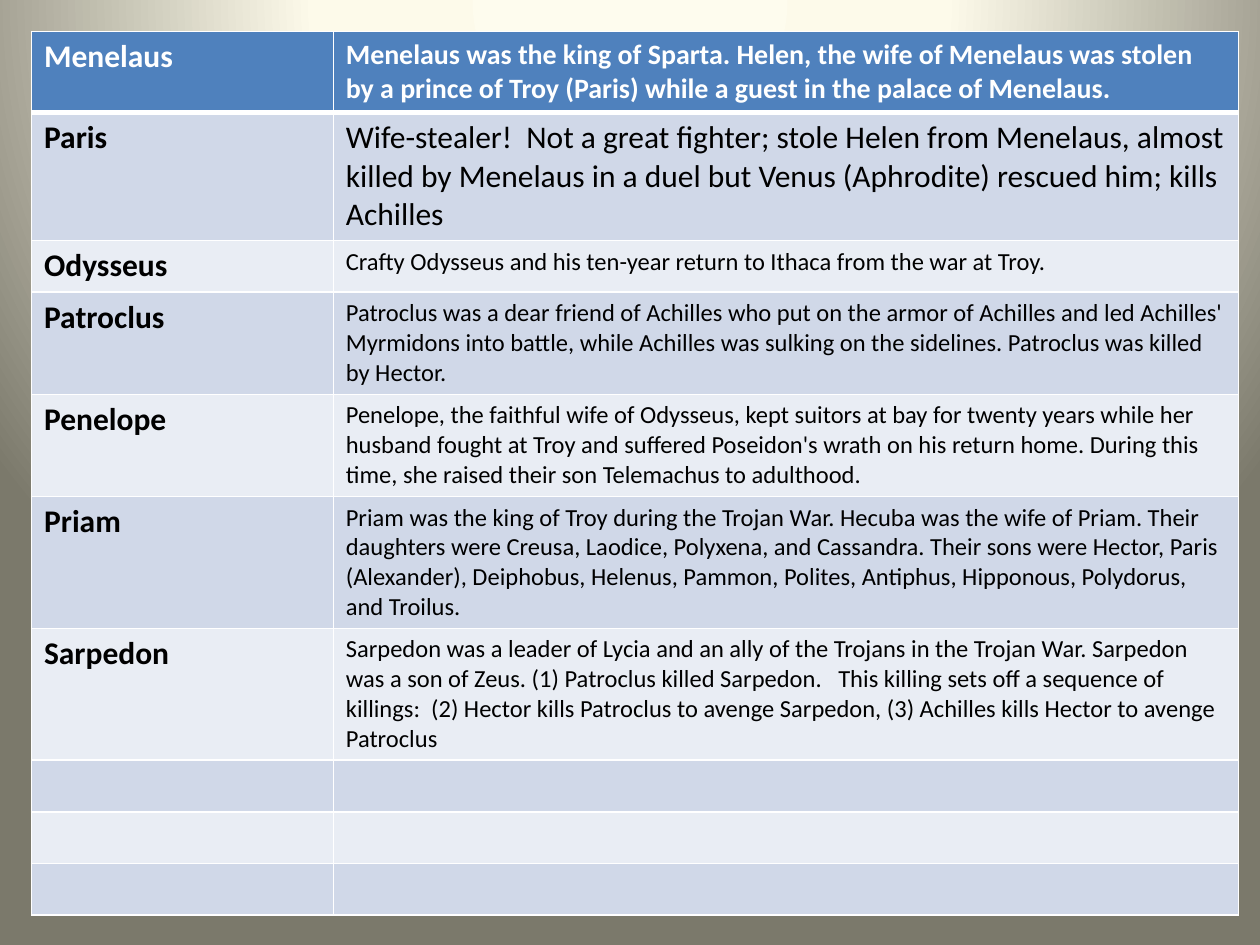
from dataclasses import dataclass

from lxml import etree
from pptx import Presentation
from pptx.dml.color import RGBColor
from pptx.oxml import ns
from pptx.util import Inches, Pt


@dataclass(frozen=True)
class Theme:
    font: str = "Calibri"
    header_fill: str = "4F81BD"
    bands: tuple = ("D0D8E8", "E9EDF4")
    header_text: str = "FFFFFF"
    body_text: str = "000000"
    border: str = "FFFFFF"
    backdrop: tuple = ((0, "FEFCEE"), (40, "FDFAEA"), (100, "7B796B"))
    name_size: int = 18
    header_size: int = 16
    body_size: int = 14
    rule: int = 1
    header_rule: int = 3


THEME = Theme()
BLANK_ROWS = 3

# Name, description, description size
CHARACTERS = [
    ("Menelaus",
     "Menelaus was the king of Sparta. Helen, the wife of Menelaus was stolen "
     "by a prince of Troy (Paris) while a guest in the palace of Menelaus.",
     THEME.header_size),
    ("Paris",
     "Wife-stealer!  Not a great fighter; stole Helen from Menelaus, almost "
     "killed by Menelaus in a duel but Venus (Aphrodite) rescued him; kills "
     "Achilles",
     THEME.name_size),
    ("Odysseus",
     "Crafty Odysseus and his ten-year return to Ithaca from the war at Troy.",
     THEME.body_size),
    ("Patroclus",
     "Patroclus was a dear friend of Achilles who put on the armor of Achilles "
     "and led Achilles' Myrmidons into battle, while Achilles was sulking on "
     "the sidelines. Patroclus was killed by Hector.",
     THEME.body_size),
    ("Penelope",
     "Penelope, the faithful wife of Odysseus, kept suitors at bay for twenty "
     "years while her husband fought at Troy and suffered Poseidon's wrath on "
     "his return home. During this time, she raised their son Telemachus to "
     "adulthood.",
     THEME.body_size),
    ("Priam",
     "Priam was the king of Troy during the Trojan War. Hecuba was the wife of "
     "Priam. Their daughters were Creusa, Laodice, Polyxena, and Cassandra. "
     "Their sons were Hector, Paris (Alexander), Deiphobus, Helenus, Pammon, "
     "Polites, Antiphus, Hipponous, Polydorus, and Troilus.",
     THEME.body_size),
    ("Sarpedon",
     "Sarpedon was a leader of Lycia and an ally of the Trojans in the Trojan "
     "War. Sarpedon was a son of Zeus. (1) Patroclus killed Sarpedon.   This "
     "killing sets off a sequence of killings:  (2) Hector kills Patroclus to "
     "avenge Sarpedon, (3) Achilles kills Hector to avenge Patroclus",
     THEME.body_size),
]


def add_xml(parent, tag, **attributes):
    values = {key: str(value) for key, value in attributes.items()}
    return etree.SubElement(parent, ns.qn(tag), values)


def write_text(frame, wording, *, size, color, bold=False):
    run = frame.paragraphs[0].add_run()
    run.text = wording
    run.font.name = THEME.font
    run.font.size = Pt(size)
    run.font.bold = bold
    run.font.color.rgb = RGBColor.from_string(color)


def paint_backdrop(slide):
    """Fill the slide with a circular gradient centred above its top edge."""
    slide.background.fill.gradient()
    gradient = slide.element.find(".//" + ns.qn("a:gradFill"))
    for child in list(gradient):
        gradient.remove(child)
    stops = add_xml(gradient, "a:gsLst")
    for position, color in THEME.backdrop:
        stop = add_xml(stops, "a:gs", pos=position * 1000)
        add_xml(stop, "a:srgbClr", val=color)
    circle = add_xml(gradient, "a:path", path="circle")
    add_xml(circle, "a:fillToRect", l=50000, t=-80000, r=50000, b=180000)


def style_cell(cell, fill, top, bottom):
    """Draw the four borders, then the fill, in schema order."""
    properties = cell._tc.get_or_add_tcPr()
    widths = {"L": THEME.rule, "R": THEME.rule, "T": top, "B": bottom}
    for side, width in widths.items():
        line = add_xml(properties, "a:ln" + side, w=Pt(width))
        add_xml(add_xml(line, "a:solidFill"), "a:srgbClr", val=THEME.border)
    cell.fill.solid()
    cell.fill.fore_color.rgb = RGBColor.from_string(fill)


def add_character_table(slide, left, top, width, row_height):
    row_count = len(CHARACTERS) + BLANK_ROWS
    table = slide.shapes.add_table(
        row_count, 2, left, top, width, row_height * row_count).table
    table.columns[0].width = width // 4
    table.columns[1].width = width - width // 4

    # Header and banded rows
    for index, row in enumerate(table.rows):
        row.height = row_height
        header = index == 0
        fill = THEME.header_fill if header else THEME.bands[(index - 1) % 2]
        above = THEME.header_rule if index == 1 else THEME.rule
        below = THEME.header_rule if header else THEME.rule
        for cell in row.cells:
            style_cell(cell, fill, above, below)

    # Names and descriptions
    for index, (name, description, size) in enumerate(CHARACTERS):
        header = index == 0
        color = THEME.header_text if header else THEME.body_text
        write_text(table.cell(index, 0).text_frame, name,
                   size=THEME.name_size, color=color, bold=True)
        write_text(table.cell(index, 1).text_frame, description,
                   size=size, color=color, bold=header)


def main():
    deck = Presentation()
    deck.slide_width, deck.slide_height = Inches(10), Inches(7.5)
    slide = deck.slides.add_slide(deck.slide_layouts[6])
    paint_backdrop(slide)
    add_character_table(slide, Inches(0.25), Inches(0.25),
                        Inches(9.58), Inches(0.41))
    deck.save("out.pptx")


if __name__ == "__main__":
    main()
